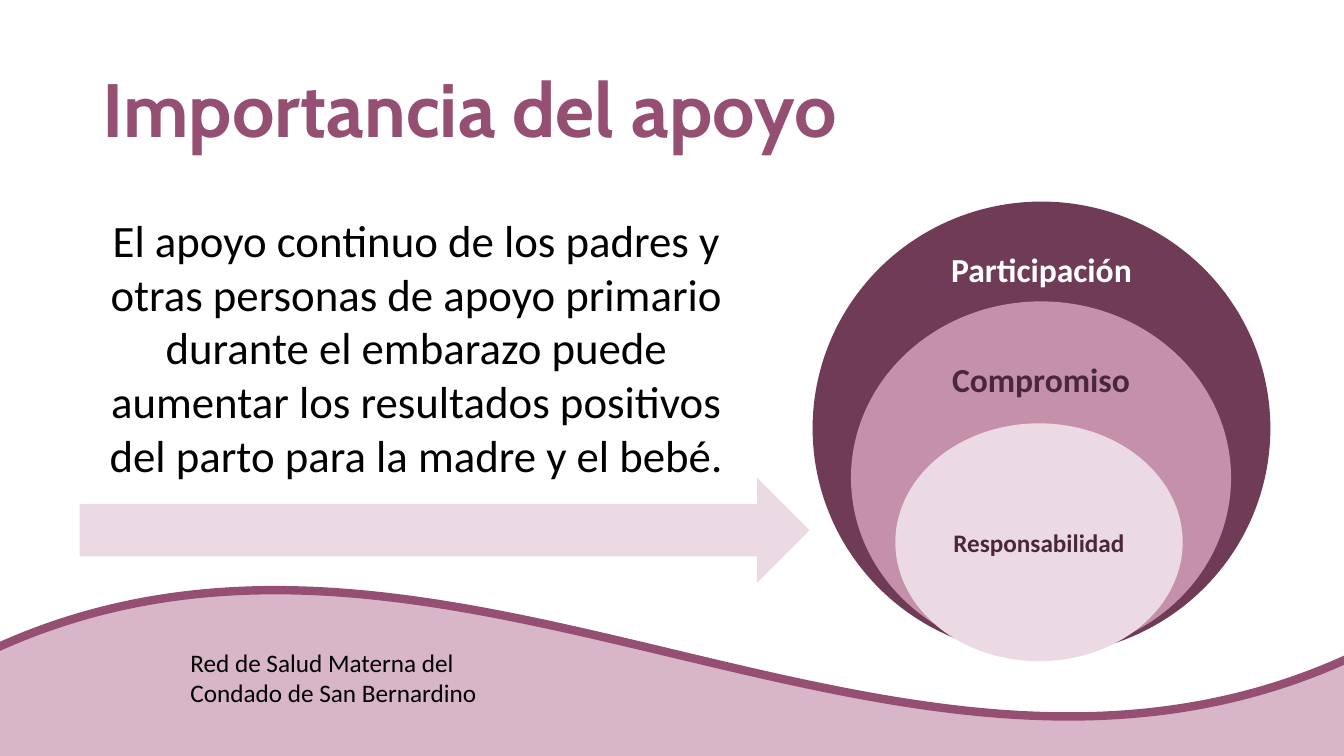
from pptx import Presentation
from pptx.dml.color import RGBColor
from pptx.enum.shapes import MSO_SHAPE
from pptx.enum.text import MSO_ANCHOR, MSO_AUTO_SIZE, PP_ALIGN
from pptx.util import Pt

EMU_PER_PX = 9144  # 100 px to the inch
TITLE_ONLY = 5

WHITE = RGBColor(0xFF, 0xFF, 0xFF)
BLACK = RGBColor(0x00, 0x00, 0x00)
MAUVE = RGBColor(0x95, 0x4F, 0x72)
WAVE_PINK = RGBColor(0xD8, 0xB5, 0xC7)
DARK_PLUM = RGBColor(0x70, 0x3B, 0x56)
ROSE = RGBColor(0xC4, 0x90, 0xAA)
PALE_PINK = RGBColor(0xEB, 0xDA, 0xE3)
TEXT_PLUM = RGBColor(0x4A, 0x28, 0x39)


def px(*lengths):
    return [length * EMU_PER_PX for length in lengths]


class SlideBuilder:
    heading_font = "Cabin"
    body_font = "Calibri"

    def __init__(self, presentation):
        self.slide = presentation.slides.add_slide(presentation.slide_layouts[TITLE_ONLY])
        background = self.slide.background.fill
        background.solid()
        background.fore_color.rgb = WHITE

    def fill_text(self, shape, text, size, color, font=body_font, bold=False,
                  align=PP_ALIGN.LEFT, anchor=MSO_ANCHOR.TOP):
        frame = shape.text_frame
        frame.word_wrap = True
        frame.auto_size = MSO_AUTO_SIZE.NONE
        frame.vertical_anchor = anchor
        paragraph = frame.paragraphs[0]
        paragraph.alignment = align
        run = paragraph.add_run()
        run.text = text
        run.font.name = font
        run.font.size = Pt(size)
        run.font.bold = bold
        run.font.color.rgb = color
        return paragraph

    def title(self, text, *box):
        shape = self.slide.shapes.title
        shape.left, shape.top, shape.width, shape.height = px(*box)
        paragraph = self.fill_text(shape, text, 54, MAUVE, self.heading_font, bold=True,
                                   anchor=MSO_ANCHOR.MIDDLE)
        paragraph.line_spacing = 0.9

    def shape(self, kind, fill, *box, line=None, line_width=0):
        shape = self.slide.shapes.add_shape(kind, *px(*box))
        shape.shadow.inherit = False
        shape.fill.solid()
        shape.fill.fore_color.rgb = fill
        if line is None:
            shape.line.fill.background()
        else:
            shape.line.color.rgb = line
            shape.line.width = Pt(line_width)
        return shape

    def text(self, text, size, color, *box, **style):
        self.fill_text(self.slide.shapes.add_textbox(*px(*box)), text, size, color, **style)

    def ring_label(self, text, size, color, left, middle, width):
        """Centre a bold label on the given height inside a ring."""
        height = 50
        self.text(text, size, color, left, middle - height // 2, width, height,
                  bold=True, align=PP_ALIGN.CENTER, anchor=MSO_ANCHOR.MIDDLE)


def main():
    presentation = Presentation()
    presentation.slide_width, presentation.slide_height = px(1333, 750)
    builder = SlideBuilder(presentation)

    builder.shape(MSO_SHAPE.WAVE, WAVE_PINK, -15, 583, 1363, 521, line=MAUVE, line_width=6)
    builder.title("Importancia del apoyo", 92, 40, 1150, 145)

    rings = [
        ("Participación", 24, WHITE, DARK_PLUM, (806, 200, 454, 450), 267),
        ("Compromiso", 24, TEXT_PLUM, ROSE, (844, 299, 377, 350), 376),
        ("Responsabilidad", 18, TEXT_PLUM, PALE_PINK, (888, 420, 285, 236), 538),
    ]
    for label, size, color, fill, box, label_middle in rings:
        builder.shape(MSO_SHAPE.OVAL, fill, *box)
        left, _, width, _ = box
        builder.ring_label(label, size, color, left, label_middle, width)

    builder.text(
        "El apoyo continuo de los padres y otras personas de apoyo primario durante "
        "el embarazo puede aumentar los resultados positivos del parto para la madre "
        "y el bebé.",
        32, BLACK, 82, 206, 662, 279, align=PP_ALIGN.CENTER)
    builder.shape(MSO_SHAPE.RIGHT_ARROW, PALE_PINK, 79, 474, 724, 104)

    footer = builder.shape(MSO_SHAPE.RECTANGLE, WAVE_PINK, 179, 637, 358, 71)
    builder.fill_text(footer, "Red de Salud Materna del Condado de San Bernardino", 18, BLACK)

    presentation.save("out.pptx")


if __name__ == "__main__":
    main()
